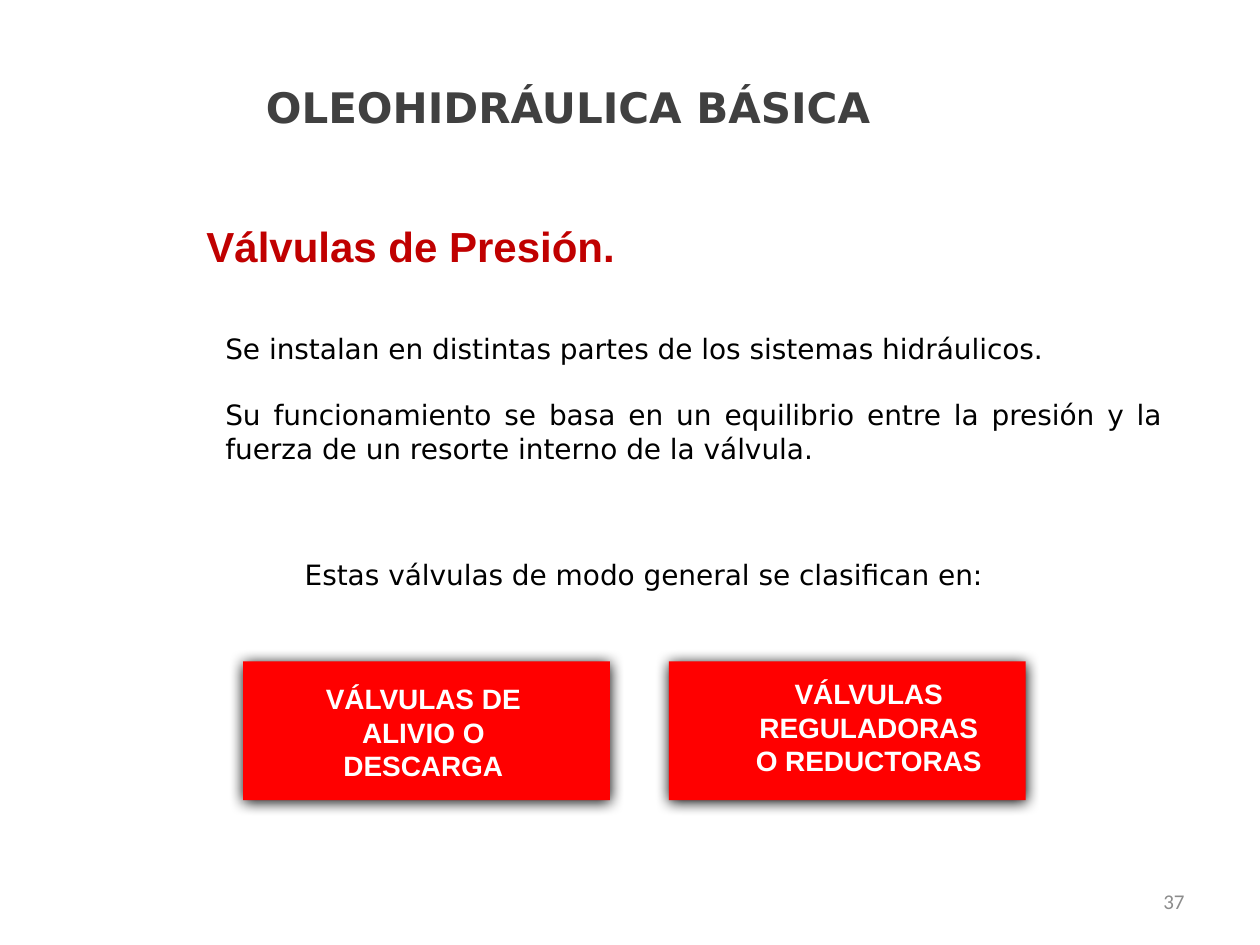
from lxml.etree import SubElement
from pptx import Presentation
from pptx.dml.color import RGBColor
from pptx.enum.shapes import MSO_SHAPE
from pptx.enum.text import MSO_ANCHOR, PP_ALIGN
from pptx.oxml.ns import qn
from pptx.util import Inches, Pt

COLORS = {"title": "404040", "heading": "C00000", "text": "000000",
          "box": "FF0000", "label": "FFFFFF", "number": "8C8C8C"}

deck = Presentation()
deck.slide_width, deck.slide_height = Inches(10), Inches(7.5)
COL, ROW = deck.slide_width / 100, deck.slide_height / 75
slide = deck.slides.add_slide(deck.slide_layouts.get_by_name("Title Only"))


def grid(left, top, width, height):
    """Turn columns and rows into slide lengths."""
    return [round(n * unit) for n, unit in
            zip((left, top, width, height), (COL, ROW, COL, ROW))]


def write(shape, paragraphs, size, font, color, bold=False,
          align=PP_ALIGN.LEFT, anchor=MSO_ANCHOR.TOP, gap=0):
    """Fill a shape with uniformly formatted paragraphs."""
    frame = shape.text_frame
    frame.word_wrap = True
    frame.vertical_anchor = anchor
    frame.text = "\n".join(paragraphs)
    for index, paragraph in enumerate(frame.paragraphs):
        paragraph.alignment = align
        paragraph.space_before = Pt(gap if index else 0)
        paragraph.font.size = Pt(size)
        paragraph.font.name = font
        paragraph.font.bold = bold
        paragraph.font.color.rgb = RGBColor.from_string(COLORS[color])


# Title and heading
title = slide.shapes.title
title.left, title.top, title.width, title.height = grid(20.1, 6, 60.6, 5)
write(title, ["OLEOHIDRÁULICA BÁSICA"], 24, "DejaVu Sans", "title", bold=True)
heading = slide.shapes.add_textbox(*grid(15.4, 17, 37.8, 5))
write(heading, ["Válvulas de Presión."], 24, "Arial", "heading", bold=True)

# Explanation
explanation = slide.shapes.add_textbox(*grid(16.9, 25.7, 76.4, 11.8))
write(explanation,
      ["Se instalan en distintas partes de los sistemas hidráulicos.",
       "Su funcionamiento se basa en un equilibrio entre la presión y la "
       "fuerza de un resorte interno de la válvula."],
      16, "DejaVu Sans", "text", align=PP_ALIGN.JUSTIFY,
      anchor=MSO_ANCHOR.MIDDLE, gap=19)
lead_in = slide.shapes.add_textbox(*grid(23.2, 43.8, 60.6, 3.7))
write(lead_in, ["Estas válvulas de modo general se clasifican en:"],
      16, "DejaVu Sans", "text")

# Valve classes: a shadowed box and its label
valve_classes = [
    ("VÁLVULAS DE ALIVIO O DESCARGA",
     (19.3, 52.5, 29.1, 11), (21.4, 53.6, 24.4, 9.1)),
    ("VÁLVULAS REGULADORAS O REDUCTORAS",
     (53.1, 52.5, 28.3, 11), (58.7, 53.2, 20.5, 9.1)),
]
for name, box_place, label_place in valve_classes:
    box = slide.shapes.add_shape(MSO_SHAPE.RECTANGLE, *grid(*box_place))
    box.fill.solid()
    box.fill.fore_color.rgb = RGBColor.from_string(COLORS["box"])
    box.line.fill.background()
    box.shadow.inherit = False
    effects = box.element.spPr.find(qn("a:effectLst"))
    shadow = SubElement(effects, qn("a:outerShdw"), blurRad=str(Pt(8.5)),
                        dist=str(Pt(1)), dir="5400000", rotWithShape="0")
    SubElement(shadow, qn("a:srgbClr"), val=COLORS["text"])

    label = slide.shapes.add_textbox(*grid(*label_place))
    write(label, [name], 16, "Arial", "label", bold=True,
          align=PP_ALIGN.CENTER)

# Slide number
number = slide.shapes.add_textbox(*grid(71.7, 69.5, 23.3, 4))
write(number, ["37"], 12, "Calibri", "number", align=PP_ALIGN.RIGHT,
      anchor=MSO_ANCHOR.MIDDLE)

deck.save("out.pptx")
